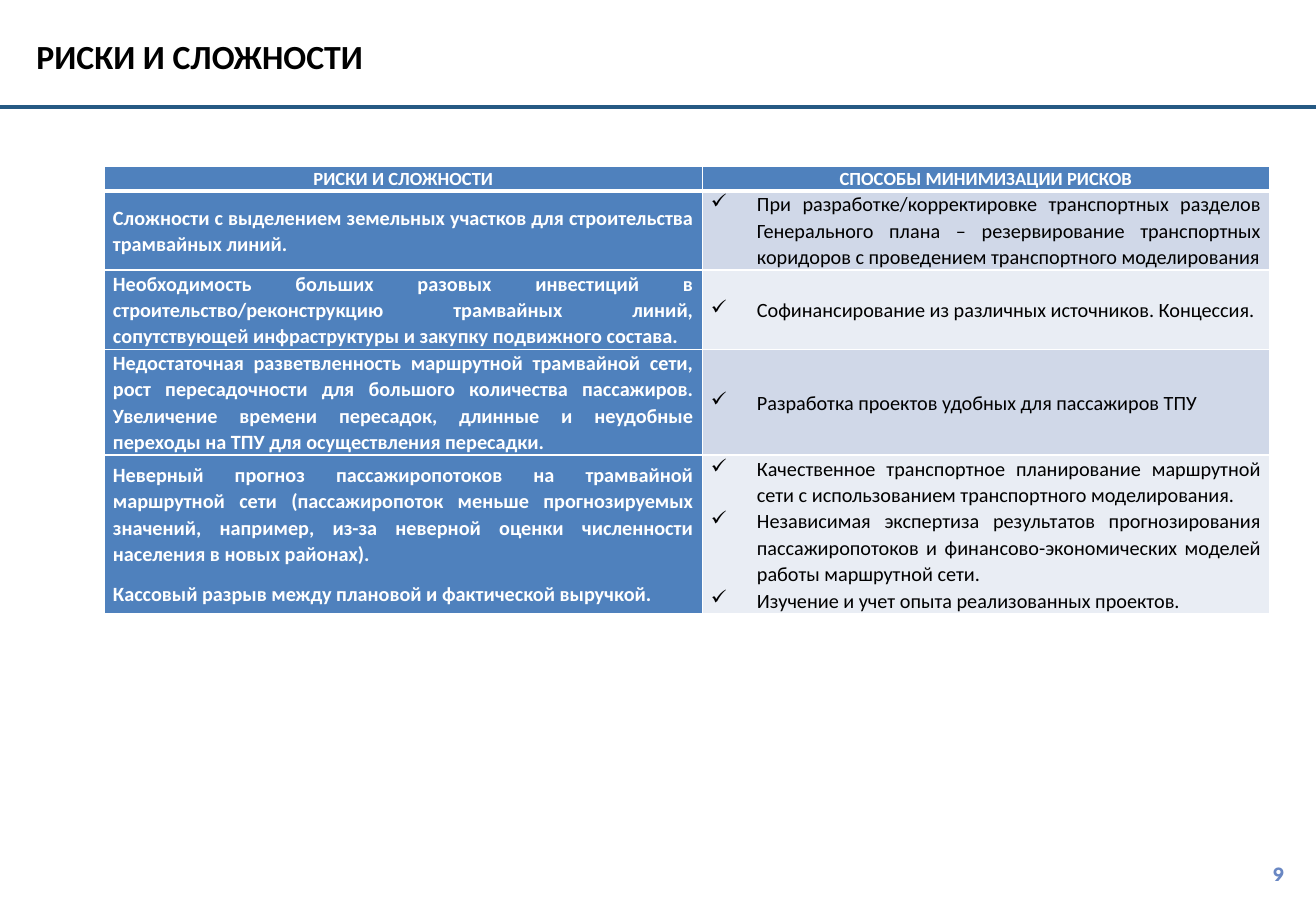
from pptx import Presentation, util as u
from pptx.dml.color import RGBColor
from pptx.enum import shapes, text
from pptx.oxml import parse_xml
from pptx.oxml.ns import nsdecls

WHITE = RGBColor(0xFF, 0xFF, 0xFF)
BLACK = RGBColor(0x00, 0x00, 0x00)
NAVY = RGBColor(0x25, 0x59, 0x83)
BLUE = RGBColor(0x4F, 0x81, 0xBD)
BAND_DARK = RGBColor(0xD0, 0xD8, 0xE8)
BAND_LIGHT = RGBColor(0xE9, 0xED, 0xF4)
NUMBER_BLUE = RGBColor(0x69, 0x87, 0xC3)

W, H = u.Inches(10.83), u.Inches(7.5)
HEADER_LINE = u.Inches(0.88)
COLUMNS = [4.92, 4.67]
ROWS = [0.2, 0.65, 0.65, 0.87, 1.3]
ALIGN = text.PP_ALIGN

TITLE = "РИСКИ И СЛОЖНОСТИ"
HEADINGS = [TITLE, "СПОСОБЫ МИНИМИЗАЦИИ РИСКОВ"]
RISKS = [
    (["Сложности с выделением земельных участков для строительства трамвайных линий."],
     ["При разработке/корректировке транспортных разделов Генерального плана – резервирование "
      "транспортных коридоров с проведением транспортного моделирования"]),
    (["Необходимость больших разовых инвестиций в строительство/реконструкцию трамвайных линий, "
      "сопутствующей инфраструктуры и закупку подвижного состава."],
     ["Софинансирование из различных источников. Концессия."]),
    (["Недостаточная разветвленность маршрутной трамвайной сети, рост пересадочности для большого "
      "количества пассажиров. Увеличение времени пересадок, длинные и неудобные переходы на ТПУ "
      "для осуществления пересадки."],
     ["Разработка проектов удобных для пассажиров ТПУ"]),
    (["Неверный прогноз пассажиропотоков на трамвайной маршрутной сети (пассажиропоток меньше "
      "прогнозируемых значений, например, из-за неверной оценки численности населения в новых "
      "районах).",
      "Кассовый разрыв между плановой и фактической выручкой."],
     ["Качественное транспортное планирование маршрутной сети с использованием транспортного "
      "моделирования.",
      "Независимая экспертиза результатов прогнозирования пассажиропотоков и "
      "финансово-экономических моделей работы маршрутной сети.",
      "Изучение и учет опыта реализованных проектов."]),
]


def style_font(font, size, color, bold=True, name="Calibri"):
    font.name, font.size, font.bold = name, u.Pt(size), bold
    font.color.rgb = color


def add_title(s):
    sp = s.shapes.title
    sp.left, sp.top, sp.width, sp.height = 0, u.Inches(0.01), u.Inches(10.14), u.Inches(0.91)
    sp.fill.solid()
    sp.fill.fore_color.rgb = WHITE
    tf = sp.text_frame
    tf.text = TITLE
    tf.vertical_anchor = text.MSO_ANCHOR.MIDDLE
    tf.margin_left = u.Inches(0.3)
    p = tf.paragraphs[0]
    p.alignment = ALIGN.LEFT
    style_font(p.runs[0].font, 20, BLACK)


def add_header_line(s):
    line = s.shapes.add_connector(shapes.MSO_CONNECTOR.STRAIGHT, 0, HEADER_LINE, W, HEADER_LINE)
    line.line.color.rgb = NAVY
    line.line.width = u.Pt(2.25)
    line._element.spPr.append(parse_xml(f"<a:effectLst {nsdecls('a')}/>"))


def set_borders(cell, bottom):
    tcPr = cell._tc.get_or_add_tcPr()
    for side, width in zip("LRTB", (1, 1, 1, bottom)):
        tcPr.append(parse_xml(
            f'<a:ln{side} {nsdecls("a")} w="{u.Pt(width)}"><a:solidFill>'
            f'<a:srgbClr val="{WHITE}"/></a:solidFill></a:ln{side}>'))


def add_check(p):
    pPr = p._p.get_or_add_pPr()
    indent = u.Inches(0.38)
    pPr.set("marL", str(indent))
    pPr.set("indent", str(-indent))
    pPr.append(parse_xml(f'<a:buChar {nsdecls("a")} char="✓"/>'))


def fill_cell(cell, lines, fill, color=WHITE, size=12, align=ALIGN.JUSTIFY,
              checks=False, bottom=1):
    set_borders(cell, bottom)
    cell.fill.solid()
    cell.fill.fore_color.rgb = fill
    cell.vertical_anchor = text.MSO_ANCHOR.MIDDLE
    cell.margin_left = cell.margin_right = u.Inches(0.07)
    cell.margin_top = cell.margin_bottom = 0
    tf = cell.text_frame
    tf.text = "\n".join(lines)
    for i, p in enumerate(tf.paragraphs, 1):
        p.alignment = align
        p.line_spacing = 1.07
        p.space_after = u.Pt(0 if checks and i < len(lines) else 8)
        if checks:
            add_check(p)
        style_font(p.runs[0].font, size, color, bold=not checks)


def add_risk_table(s):
    table = s.shapes.add_table(len(ROWS), len(COLUMNS), u.Inches(0.86), u.Inches(1.37),
                               u.Inches(sum(COLUMNS)), u.Inches(sum(ROWS))).table
    for column, width in zip(table.columns, COLUMNS):
        column.width = u.Inches(width)
    for row, height in zip(table.rows, ROWS):
        row.height = u.Inches(height)
    for c, heading in enumerate(HEADINGS):
        fill_cell(table.cell(0, c), [heading], BLUE, size=11, align=ALIGN.CENTER, bottom=3)
    for r, (risks, remedies) in enumerate(RISKS, 1):
        fill_cell(table.cell(r, 0), risks, BLUE)
        fill_cell(table.cell(r, 1), remedies, BAND_DARK if r % 2 else BAND_LIGHT,
                  color=BLACK, checks=True)


def add_page_number(s):
    sp = s.shapes.add_textbox(u.Inches(8.14), u.Inches(6.93), u.Inches(2.53), u.Inches(0.52))
    tf = sp.text_frame
    tf.word_wrap = True
    tf.vertical_anchor = text.MSO_ANCHOR.MIDDLE
    tf.text = "9"
    p = tf.paragraphs[0]
    p.alignment = ALIGN.RIGHT
    style_font(p.runs[0].font, 12, NUMBER_BLUE, name="League Spartan")


def main():
    prs = Presentation()
    prs.slide_width, prs.slide_height = W, H
    s = prs.slides.add_slide(prs.slide_layouts[5])
    # Header
    add_title(s)
    add_header_line(s)
    # Risks and remedies
    add_risk_table(s)
    # Footer
    add_page_number(s)
    prs.save("out.pptx")


if __name__ == "__main__":
    main()
